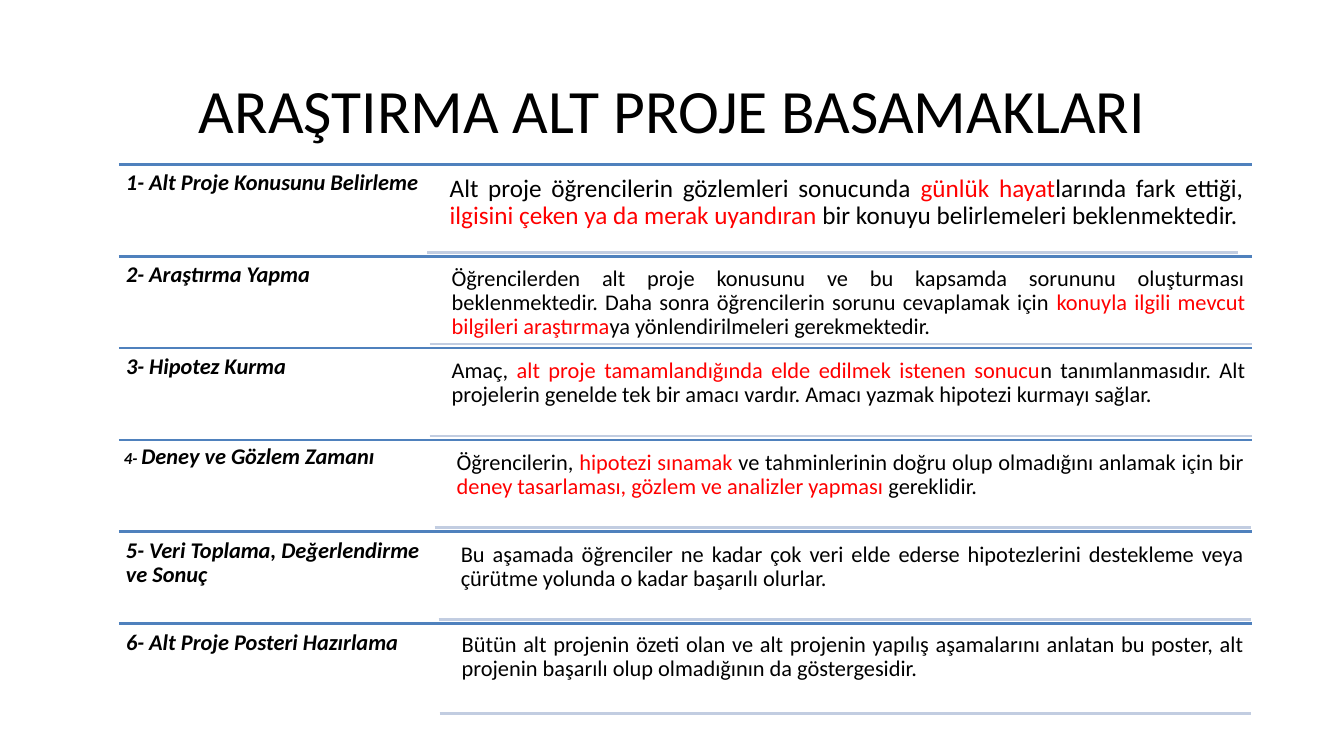
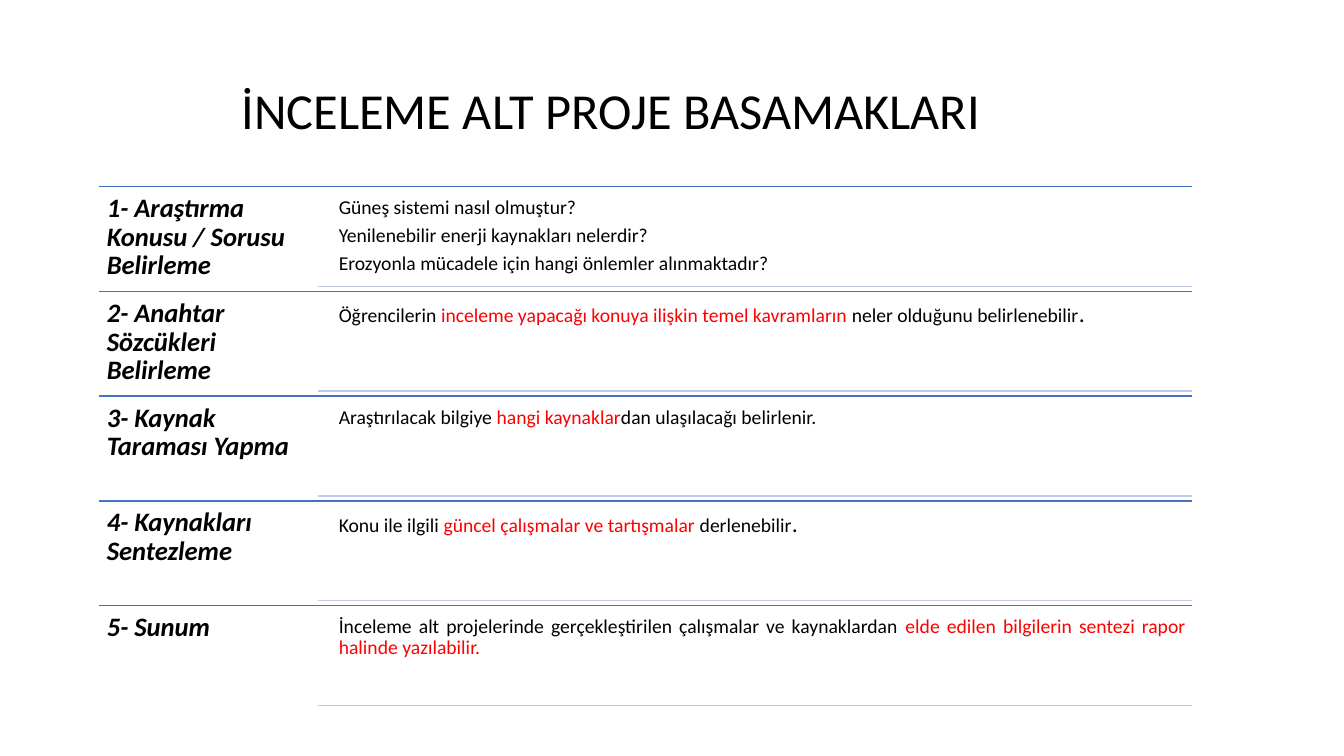
from lxml.etree import SubElement
from pptx import Presentation
from pptx.dml.color import RGBColor
from pptx.enum.shapes import MSO_CONNECTOR
from pptx.enum.text import MSO_ANCHOR, PP_ALIGN
from pptx.oxml.ns import qn
from pptx.util import Inches, Pt

# Shared style
COLOURS = {"text": "000000", "accent": "FF0000"}
FONT = "Calibri"
TEXT_GAP = 0.15

deck = Presentation()
deck.slide_width = Inches(13.33)
deck.slide_height = Inches(7.5)


def add_text(page, left, top, width, height, paragraphs, size, inset,
             align=PP_ALIGN.LEFT, anchor=MSO_ANCHOR.TOP, strong=False):
    """Each span is (text, colour name, optional own size)."""
    box = page.shapes.add_textbox(Inches(left), Inches(top), Inches(width), Inches(height))
    frame = box.text_frame
    frame.word_wrap = True
    frame.vertical_anchor = anchor
    frame.margin_left = frame.margin_right = Inches(inset)
    frame.margin_top = frame.margin_bottom = Inches(inset)
    for index, spans in enumerate(paragraphs):
        para = frame.add_paragraph() if index else frame.paragraphs[0]
        para.alignment = align
        para.line_spacing = 0.9
        para.space_after = Pt(5)
        for text, colour, *own_size in spans:
            span = para.add_run()
            span.text = text
            span.font.name = FONT
            span.font.size = Pt(own_size[0] if own_size else size)
            span.font.bold = span.font.italic = strong
            span.font.color.rgb = RGBColor.from_string(COLOURS[colour])


def add_rule(page, left, right, top, colour, weight):
    rule = page.shapes.add_connector(
        MSO_CONNECTOR.STRAIGHT, Inches(left), Inches(top), Inches(right), Inches(top))
    rule.line.color.rgb = RGBColor.from_string(colour)
    rule.line.width = Pt(weight)
    SubElement(rule._element.spPr, qn("a:effectLst"))


# Content: a row starts from its page's row defaults and states what differs
pages = [
    {
        "title": "ARAŞTIRMA ALT PROJE BASAMAKLARI", "title_left": 0.92, "title_size": 44,
        "left": 1.18, "right": 12.42, "top": 1.63, "bottom": 7.1,
        "strong_rule": "4F81BD", "soft_rule": "C2CDE1", "weight": 2,
        "label_size": 16,
        "defaults": {"label_inset": 0.07, "detail_inset": 0.07, "detail_size": 16,
                     "gap": 0.04, "text_right": 12.42, "rule_right": 12.42},
        "rows": [
            {"label": [("1- Alt Proje Konusunu Belirleme", "text")],
             "label_width": 3.06, "detail_size": 18, "text_right": 12.4, "rule_right": 12.28,
             "detail": [[("Alt proje öğrencilerin gözlemleri sonucunda ", "text"),
                         ("günlük hayat", "accent"),
                         ("larında fark ettiği, ", "text"),
                         ("ilgisini çeken ya da merak uyandıran", "accent"),
                         (" bir konuyu belirlemeleri beklenmektedir.", "text")]]},
            {"label": [("2- Araştırma Yapma", "text")],
             "label_width": 3.08,
             "detail": [[("Öğrencilerden alt proje konusunu ve bu kapsamda sorununu oluşturması "
                          "beklenmektedir. Daha sonra öğrencilerin sorunu cevaplamak için ", "text"),
                         ("konuyla ilgili mevcut bilgileri araştırma", "accent"),
                         ("ya yönlendirilmeleri gerekmektedir.", "text")]]},
            {"label": [("3- Hipotez Kurma", "text")],
             "label_width": 3.08,
             "detail": [[("Amaç, ", "text"),
                         ("alt proje tamamlandığında elde edilmek istenen sonucu", "accent"),
                         ("n tanımlanmasıdır. Alt projelerin genelde tek bir amacı vardır. "
                          "Amacı yazmak hipotezi kurmayı sağlar.", "text")]]},
            {"label": [("4- ", "text", 12), ("Deney ve Gözlem Zamanı", "text")],
             "label_width": 3.13, "label_inset": 0.05, "text_right": 12.41, "rule_right": 12.41,
             "detail": [[("Öğrencilerin, ", "text"),
                         ("hipotezi sınamak ", "accent"),
                         ("ve tahminlerinin doğru olup olmadığını anlamak için bir ", "text"),
                         ("deney tasarlaması, gözlem ve analizler yapması ", "accent"),
                         ("gereklidir.", "text")]]},
            {"label": [("5- Veri Toplama, Değerlendirme ve Sonuç", "text")],
             "label_width": 3.17, "text_right": 12.41, "rule_right": 12.41,
             "detail": [[("Bu aşamada öğrenciler ne kadar çok veri elde ederse hipotezlerini "
                          "destekleme veya çürütme yolunda o kadar başarılı olurlar.", "text")]]},
            {"label": [("6- Alt Proje Posteri Hazırlama", "text")],
             "label_width": 3.18, "gap": 0.02, "text_right": 12.41, "rule_right": 12.41,
             "detail": [[("Bütün alt projenin özeti olan ve alt projenin yapılış aşamalarını "
                          "anlatan bu poster, alt projenin başarılı olup olmadığının da "
                          "göstergesidir.", "text")]]},
        ],
    },
    {
        "title": "İNCELEME ALT PROJE BASAMAKLARI", "title_left": 0.31, "title_size": 36,
        "left": 0.98, "right": 11.82, "top": 1.85, "bottom": 7.05,
        "strong_rule": "4472C4", "soft_rule": "C1C9E4", "weight": 1,
        "label_size": 19,
        "defaults": {"label_width": 2.17, "label_inset": 0.08, "detail_inset": 0.06,
                     "detail_size": 14, "gap": 0.05, "text_right": 11.82, "rule_right": 11.82},
        "rows": [
            {"label": [("1- Araştırma Konusu / Sorusu Belirleme", "text")],
             "detail": [[("Güneş sistemi nasıl olmuştur?", "text")],
                        [("Yenilenebilir enerji kaynakları nelerdir?", "text")],
                        [("Erozyonla mücadele için hangi önlemler alınmaktadır?", "text")]]},
            {"label": [("2- Anahtar Sözcükleri Belirleme", "text")],
             "detail": [[("Öğrencilerin ", "text"),
                         ("inceleme yapacağı konuya ilişkin temel kavramların ", "accent"),
                         ("neler olduğunu belirlenebilir", "text"),
                         (".", "text", 17)]]},
            {"label": [("3- Kaynak Taraması Yapma", "text")],
             "detail": [[("Araştırılacak bilgiye ", "text"),
                         ("hangi kaynaklar", "accent"),
                         ("dan ulaşılacağı belirlenir.", "text")]]},
            {"label": [("4- Kaynakları Sentezleme", "text")],
             "detail": [[("Konu ile ilgili ", "text"),
                         ("güncel çalışmalar ve tartışmalar ", "accent"),
                         ("derlenebilir", "text"),
                         (".", "text", 17)]]},
            {"label": [("5- Sunum", "text")],
             "detail": [[("İnceleme alt projelerinde gerçekleştirilen çalışmalar ve "
                          "kaynaklardan ", "text"),
                         ("elde edilen bilgilerin sentezi rapor halinde yazılabilir.", "accent")]]},
        ],
    },
]

for content in pages:
    page = deck.slides.add_slide(deck.slide_layouts[6])

    # Title
    add_text(page, content["title_left"], 0.4, 11.5, 1.45, [[(content["title"], "text")]],
             content["title_size"], 0.1, PP_ALIGN.CENTER, MSO_ANCHOR.MIDDLE)

    # Equal rows: strong rule, step name, explanation, soft rule
    left = content["left"]
    row_height = (content["bottom"] - content["top"]) / len(content["rows"])
    for index, changes in enumerate(content["rows"]):
        row = {**content["defaults"], **changes}
        top = content["top"] + index * row_height
        label_right = left + row["label_width"]
        detail_left = label_right + TEXT_GAP
        detail_height = row_height - 2 * row["gap"]

        add_rule(page, left, content["right"], top, content["strong_rule"], content["weight"])
        add_text(page, left, top, row["label_width"], row_height, [row["label"]],
                 content["label_size"], row["label_inset"], strong=True)
        add_text(page, detail_left, top + row["gap"], row["text_right"] - detail_left,
                 detail_height, row["detail"], row["detail_size"], row["detail_inset"],
                 PP_ALIGN.JUSTIFY)
        add_rule(page, label_right, row["rule_right"], top + row_height - row["gap"],
                 content["soft_rule"], content["weight"])

deck.save("out.pptx")
